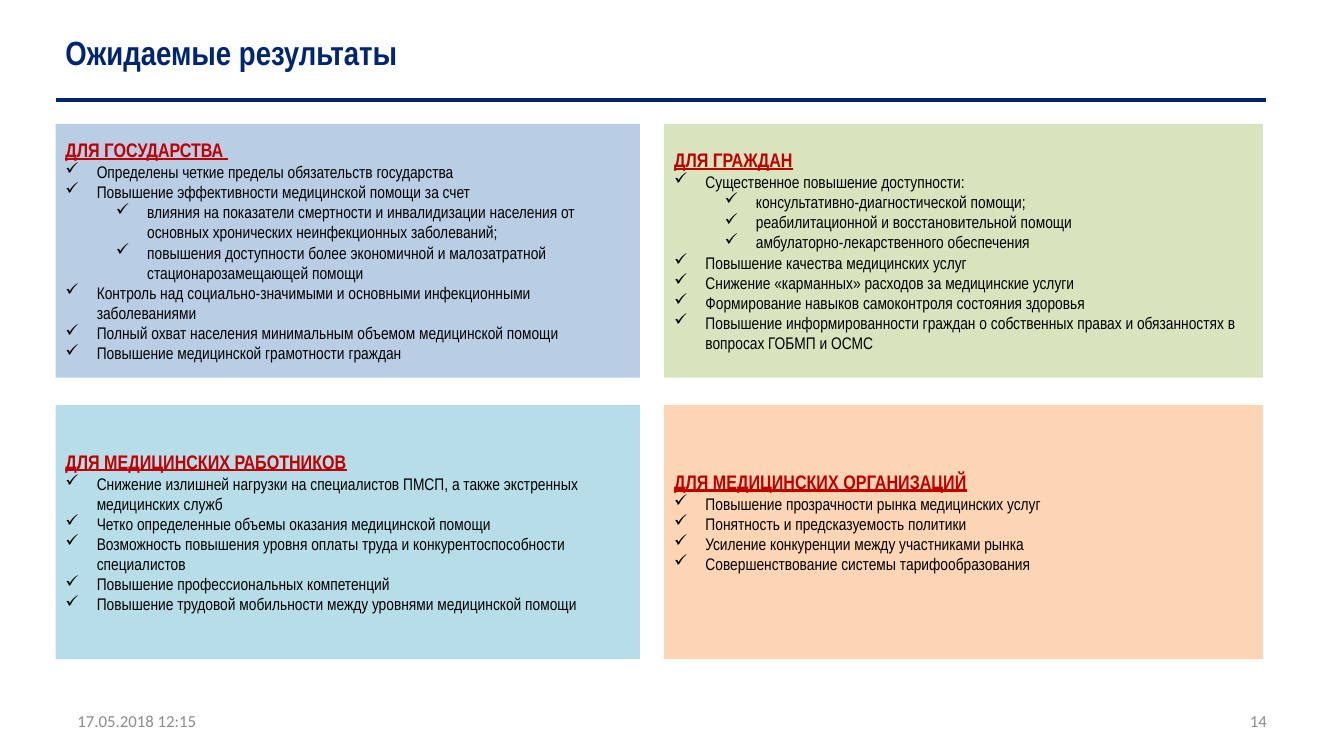
from lxml.etree import SubElement
from pptx import Presentation
from pptx.dml.color import RGBColor
from pptx.enum.shapes import MSO_CONNECTOR as Link, MSO_SHAPE as Form
from pptx.enum.text import MSO_ANCHOR as Anchor, PP_ALIGN as Align
from pptx.oxml.ns import qn
from pptx.util import Cm, Pt

NAVY = RGBColor(0x00, 0x26, 0x73)
GRAY = RGBColor(0x8C, 0x8C, 0x8C)
RED = RGBColor(0xC0, 0x00, 0x00)
BLACK = RGBColor(0x00, 0x00, 0x00)
BLUE = RGBColor(0xB9, 0xCD, 0xE5)
GREEN = RGBColor(0xD7, 0xE4, 0xBD)
AQUA = RGBColor(0xB7, 0xDE, 0xE8)
PEACH = RGBColor(0xFC, 0xD5, 0xB5)


def write(para, text, size=12, font="Arial Narrow", color=BLACK,
          bold=False, under=False, align=Align.LEFT, level=None):
    para.alignment = align
    run = para.add_run()
    run.text = text
    run.font.size = Pt(size)
    run.font.name = font
    run.font.color.rgb = color
    run.font.bold = bold
    run.font.underline = under
    if level is not None:
        para.level = level
        props = para._p.get_or_add_pPr()
        props.set("marL", str(Cm(0.79 + 1.27 * level)))
        props.set("indent", str(-Cm(0.79)))
        SubElement(props, qn("a:buChar")).set("char", "✓")


deck = Presentation()
deck.slide_width, deck.slide_height = Cm(33.87), Cm(19.05)
slide = deck.slides.add_slide(deck.slide_layouts[6])
shapes = slide.shapes

# Title, page number and date
small = dict(font="Calibri", color=GRAY)
labels = [
    ("Ожидаемые результаты", (1.4, 0.53, 31.9, 1.57),
     dict(size=24, color=NAVY, bold=True)),
    ("14", (24.28, 17.65, 7.9, 1.02), dict(small, align=Align.RIGHT)),
    ("17.05.2018 12:15", (1.7, 17.65, 7.9, 1.02), small),
]
for text, place, style in labels:
    frame = shapes.add_textbox(*map(Cm, place)).text_frame
    frame.word_wrap = True
    frame.vertical_anchor = Anchor.MIDDLE
    write(frame.paragraphs[0], text, **style)

# Rule under the title
rule = shapes.add_connector(Link.STRAIGHT, Cm(1.4), Cm(2.52), Cm(31.9), Cm(2.52))
rule.line.color.rgb = NAVY
rule.line.width = Pt(3)
SubElement(rule._element.spPr, qn("a:effectLst"))

# Panels: heading, fill, bottom inset, points with their level
panels = [
    ("ДЛЯ ГОСУДАРСТВА ", BLUE, 0.13, [
        (0, "Определены четкие пределы обязательств государства"),
        (0, "Повышение эффективности медицинской помощи за счет"),
        (1, "влияния на показатели смертности и инвалидизации населения от "
            "основных хронических неинфекционных заболеваний;"),
        (1, "повышения доступности более экономичной и малозатратной "
            "стационарозамещающей помощи"),
        (0, "Контроль над социально-значимыми и основными инфекционными "
            "заболеваниями"),
        (0, "Полный охват населения минимальным объемом медицинской помощи"),
        (0, "Повышение медицинской грамотности граждан"),
    ]),
    ("ДЛЯ ГРАЖДАН", GREEN, 0.13, [
        (0, "Существенное повышение доступности:"),
        (1, "консультативно-диагностической помощи;"),
        (1, "реабилитационной и восстановительной помощи"),
        (1, "амбулаторно-лекарственного обеспечения"),
        (0, "Повышение качества медицинских услуг"),
        (0, "Снижение «карманных» расходов за медицинские услуги"),
        (0, "Формирование навыков самоконтроля состояния здоровья"),
        (0, "Повышение информированности граждан о собственных правах и "
            "обязанностях в вопросах ГОБМП и ОСМС"),
    ]),
    ("ДЛЯ МЕДИЦИНСКИХ РАБОТНИКОВ", AQUA, 0.13, [
        (0, "Снижение излишней нагрузки на специалистов ПМСП, а также "
            "экстренных медицинских служб"),
        (0, "Четко определенные объемы оказания медицинской помощи"),
        (0, "Возможность повышения уровня оплаты труда и "
            "конкурентоспособности специалистов"),
        (0, "Повышение профессиональных компетенций"),
        (0, "Повышение трудовой мобильности между уровнями медицинской помощи"),
    ]),
    ("ДЛЯ МЕДИЦИНСКИХ ОРГАНИЗАЦИЙ", PEACH, 0.64, [
        (0, "Повышение прозрачности рынка медицинских услуг"),
        (0, "Понятность и предсказуемость политики"),
        (0, "Усиление конкуренции между участниками рынка"),
        (0, "Совершенствование системы тарифообразования"),
    ]),
]
cols = [(1.4, 14.73), (16.74, 15.09)]
for i, (head, fill, inset, points) in enumerate(panels):
    row, col = divmod(i, 2)
    left, width = cols[col]
    panel = shapes.add_shape(Form.RECTANGLE, Cm(left), Cm(3.12 + 7.09 * row),
                             Cm(width), Cm(6.4))
    panel.shadow.inherit = False
    panel.fill.solid()
    panel.fill.fore_color.rgb = fill
    panel.line.fill.background()
    frame = panel.text_frame
    frame.word_wrap = True
    frame.vertical_anchor = Anchor.MIDDLE
    frame.margin_bottom = Cm(inset)
    write(frame.paragraphs[0], head, size=14, color=RED, bold=True, under=True)
    for level, text in points:
        write(frame.add_paragraph(), text, level=level)

deck.save("out.pptx")
